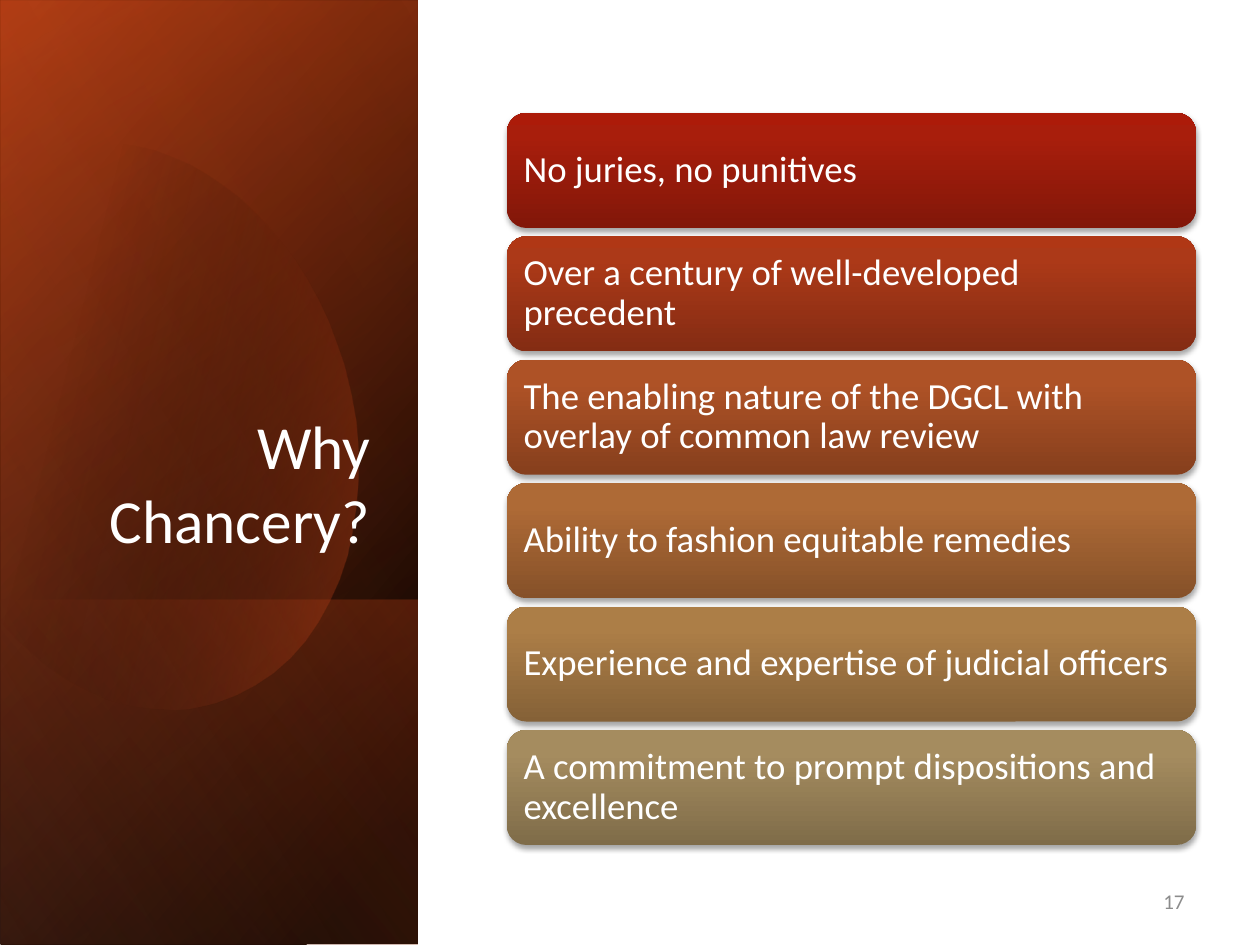
from lxml import etree
from pptx import Presentation
from pptx.dml.color import RGBColor
from pptx.enum import shapes, text
from pptx.oxml import parse_xml
from pptx.oxml.ns import nsdecls
from pptx.util import Pt

PX = 914400 / 126
COLORS = {"white": "FFFFFF", "black": "000000", "rust": "9E3611",
          "orange": "D34817", "salmon": "EF8C6A", "grey": "8C8C8C"}


def px(*lengths):
    return [round(length * PX) for length in lengths]


def paint(shape, stops, angle):
    """Fill with (position, colour, opacity) stops, angle clockwise; no outline."""
    shape.shadow.inherit = False
    shape.line.fill.background()
    marks = "".join(
        f'<a:gs pos="{pos * 1000}"><a:srgbClr val="{color}">'
        f'<a:alpha val="{opacity * 1000}"/></a:srgbClr></a:gs>'
        for pos, color, opacity in stops)
    gradient = parse_xml(
        f'<a:gradFill {nsdecls("a")} rotWithShape="1"><a:gsLst>{marks}</a:gsLst>'
        f'<a:lin ang="{round(angle * 60000)}" scaled="0"/></a:gradFill>')
    shape._element.spPr.find("{*}ln").addprevious(gradient)


prs = Presentation()
prs.slide_width, prs.slide_height = px(1260, 945)
slide = prs.slides.add_slide(prs.slide_layouts[5])
white = RGBColor.from_string(COLORS["white"])
black, orange = COLORS["black"], COLORS["orange"]

# Left panel: turned, mirrored gradient layers with a rounded blob among them
full = (-263, 263, 945, 417)
layers = [
    (full, [(8, black, 100), (100, COLORS["rust"], 100)], 50),
    ((-263, 265, 945, 417), [(0, black, 0), (99, orange, 46)], 30),
    ((37, 564, 345, 417), [(2, orange, 29), (100, black, 30)], 130),
    ("blob", [(29, black, 0), (100, orange, 43)], 14),
    (full, [(0, black, 0), (99, COLORS["salmon"], 11)], 120),
]
blob_curves = [
    [(121, 144), (215, 154), (307, 242), (344, 365)],
    [(344, 365), (387, 519), (330, 669), (215, 702)],
    [(215, 702), (144, 723), (67, 693), (9, 630)],
    [(-4, 615), (-13, 480), (-22, 344), (-32, 209)],
    [(-19, 194), (3, 173), (28, 158), (57, 149)],
    [(57, 149), (78, 142), (100, 141), (121, 144)],
]
STEPS = 16
outline = []
for a, b, c, d in blob_curves:
    for step in range(STEPS + 1):
        t = step / STEPS
        weights = ((1 - t) ** 3, 3 * t * (1 - t) ** 2, 3 * t * t * (1 - t), t ** 3)
        outline.append(tuple(sum(w * point[axis] for w, point in zip(weights, (a, b, c, d)))
                             for axis in (0, 1)))

for box, stops, angle in layers:
    if box == "blob":
        builder = slide.shapes.build_freeform(*outline[0], scale=PX)
        builder.add_line_segments(outline[1:], close=True)
        layer = builder.convert_to_shape()
    else:
        layer = slide.shapes.add_shape(shapes.MSO_SHAPE.RECTANGLE, *px(*box))
        layer.rotation = 90
        layer._element.spPr.xfrm.set("flipH", "1")
    paint(layer, stops, angle)

# Title, brought in front of the panel
title = slide.shapes.title
title.left, title.top, title.width, title.height = px(60, 232, 323, 330)
slide.shapes._spTree.append(title._element)
title.text_frame.text = "Why Chancery?"
title.text_frame.word_wrap = True
title.text_frame.auto_size = text.MSO_AUTO_SIZE.NONE
title.text_frame.vertical_anchor = text.MSO_ANCHOR.BOTTOM
heading = title.text_frame.paragraphs[0]
heading.alignment = text.PP_ALIGN.RIGHT
heading.font.name, heading.font.size = "Calibri", Pt(35)
heading.font.color.rgb = white

# Reasons: evenly spaced cards, each shaded from bottom to top
reasons = [
    ("No juries, no punitives", "821709", "A81E0C", "AC1B09"),
    ("Over a century of well-developed precedent", "842C13", "AC3918", "B03715"),
    ("The enabling nature of the DGCL with overlay of common law review",
     "863F1D", "AE5226", "B15224"),
    ("Ability to fashion equitable remedies", "865129", "AE6A36", "B16A34"),
    ("Experience and expertise of judicial officers", "856137", "AC7E47", "AF7E46"),
    ("A commitment to prompt dispositions and excellence", "7F6C49", "A58C5F", "A78D5E"),
]
FIRST_TOP, LAST_TOP = 113, 730
pitch = (LAST_TOP - FIRST_TOP) / (len(reasons) - 1)
for i, (reason, dark, mid, light) in enumerate(reasons):
    card = slide.shapes.add_shape(shapes.MSO_SHAPE.ROUNDED_RECTANGLE,
                                  *px(507, FIRST_TOP + i * pitch, 689, 115))
    paint(card, [(0, dark, 100), (80, mid, 100), (100, light, 100)], 270)
    effects = card._element.spPr.find("{*}effectLst")
    effects.append(parse_xml(
        f'<a:outerShdw {nsdecls("a")} blurRad="{Pt(3.1)}" dist="{Pt(1.8)}" dir="5400000" '
        f'rotWithShape="0"><a:srgbClr val="{black}"><a:alpha val="35000"/></a:srgbClr>'
        '</a:outerShdw>'))
    frame = card.text_frame
    frame.word_wrap = True
    frame.vertical_anchor = text.MSO_ANCHOR.MIDDLE
    frame.margin_left, frame.margin_top, frame.margin_right, frame.margin_bottom = px(*[11] * 4)
    frame.text = reason
    line = frame.paragraphs[0]
    line.alignment = text.PP_ALIGN.LEFT
    line.line_spacing = 0.9
    line.font.name, line.font.size = "Calibri", Pt(21)
    line.font.color.rgb = white

# Page number
page = slide.shapes.add_textbox(*px(903, 876, 294, 50)).text_frame
page.word_wrap = True
page.vertical_anchor = text.MSO_ANCHOR.MIDDLE
page.text = "17"
number = page.paragraphs[0]
number.alignment = text.PP_ALIGN.RIGHT
number.font.name, number.font.size = "Calibri", Pt(12)
number.font.color.rgb = RGBColor.from_string(COLORS["grey"])

prs.save("out.pptx")
